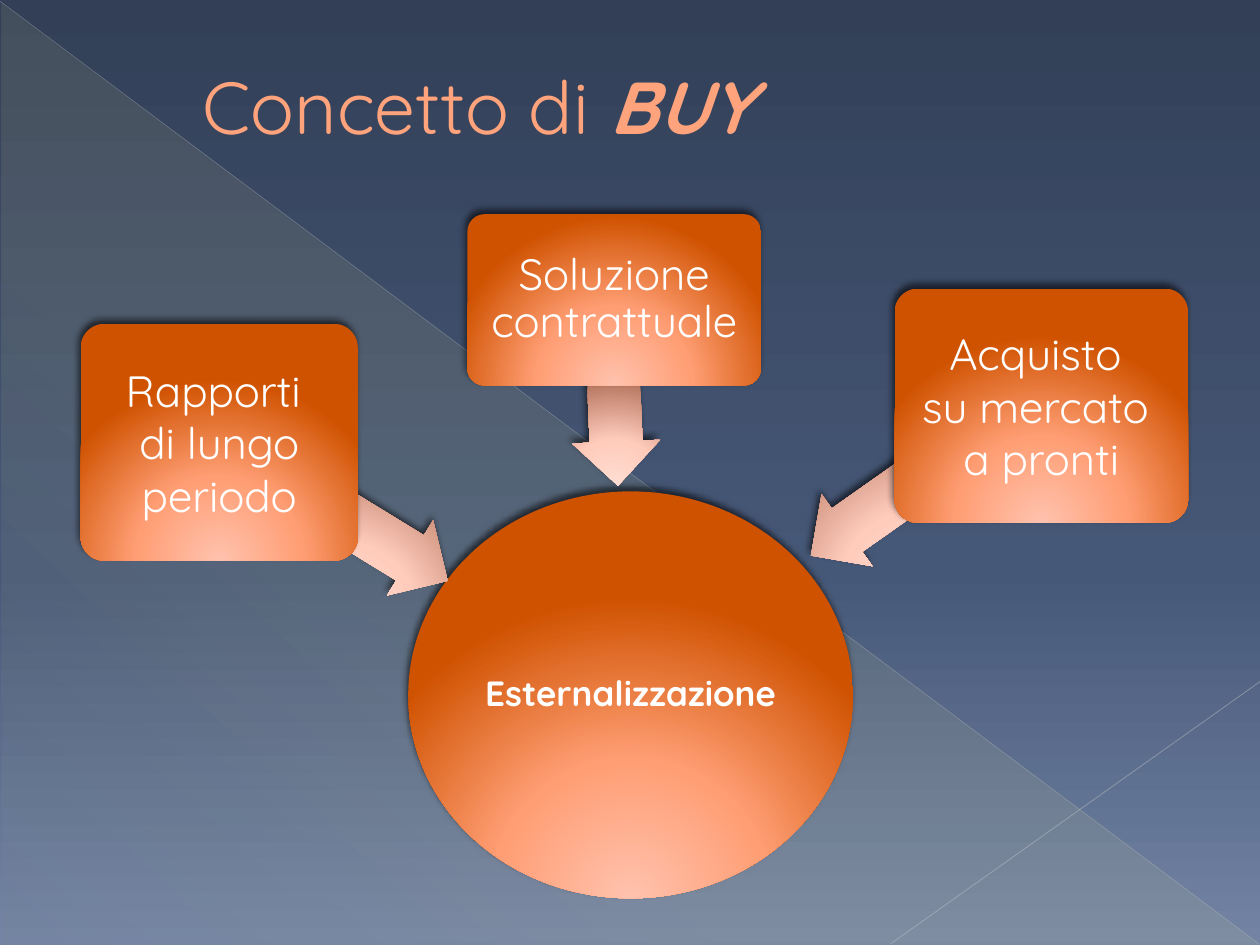
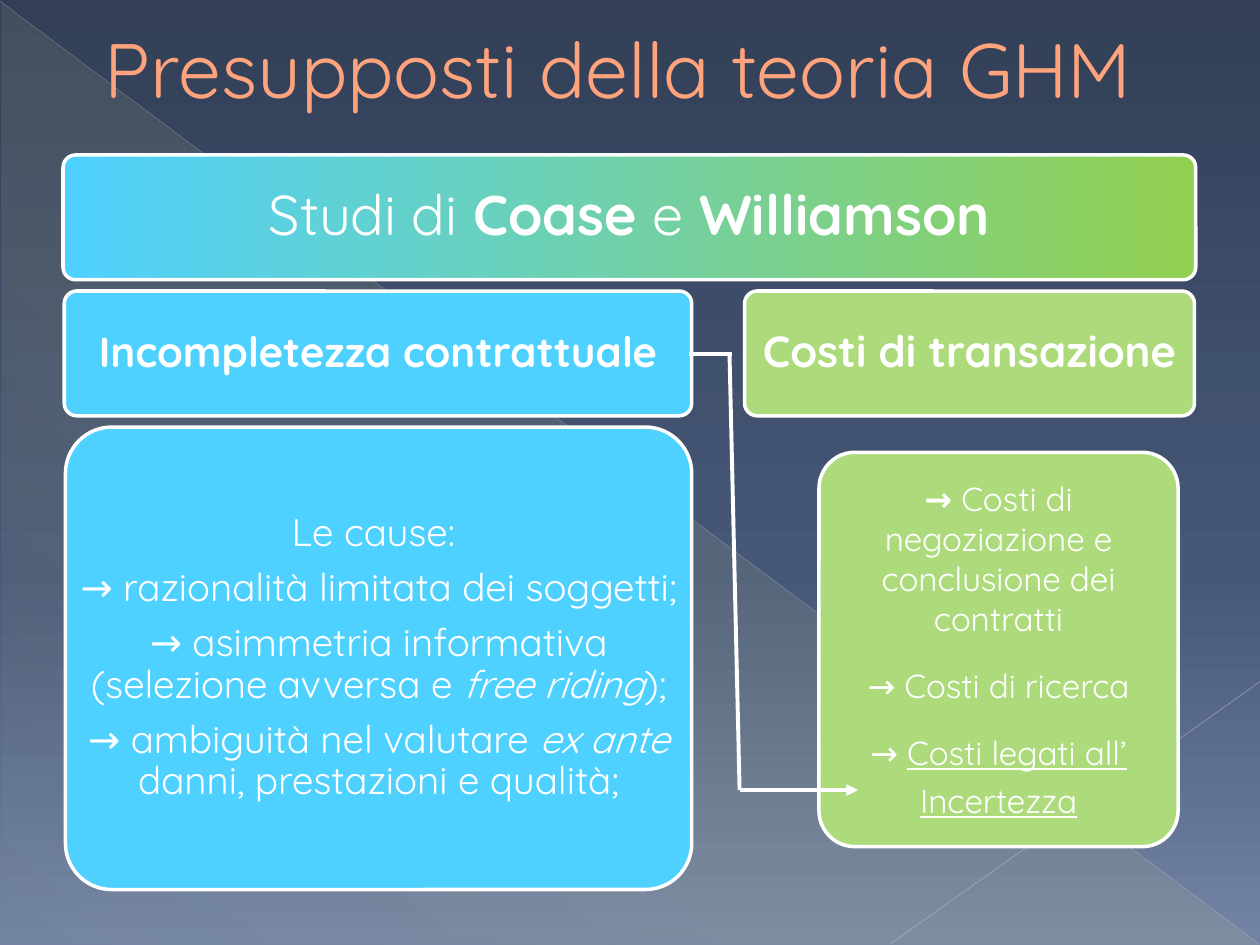
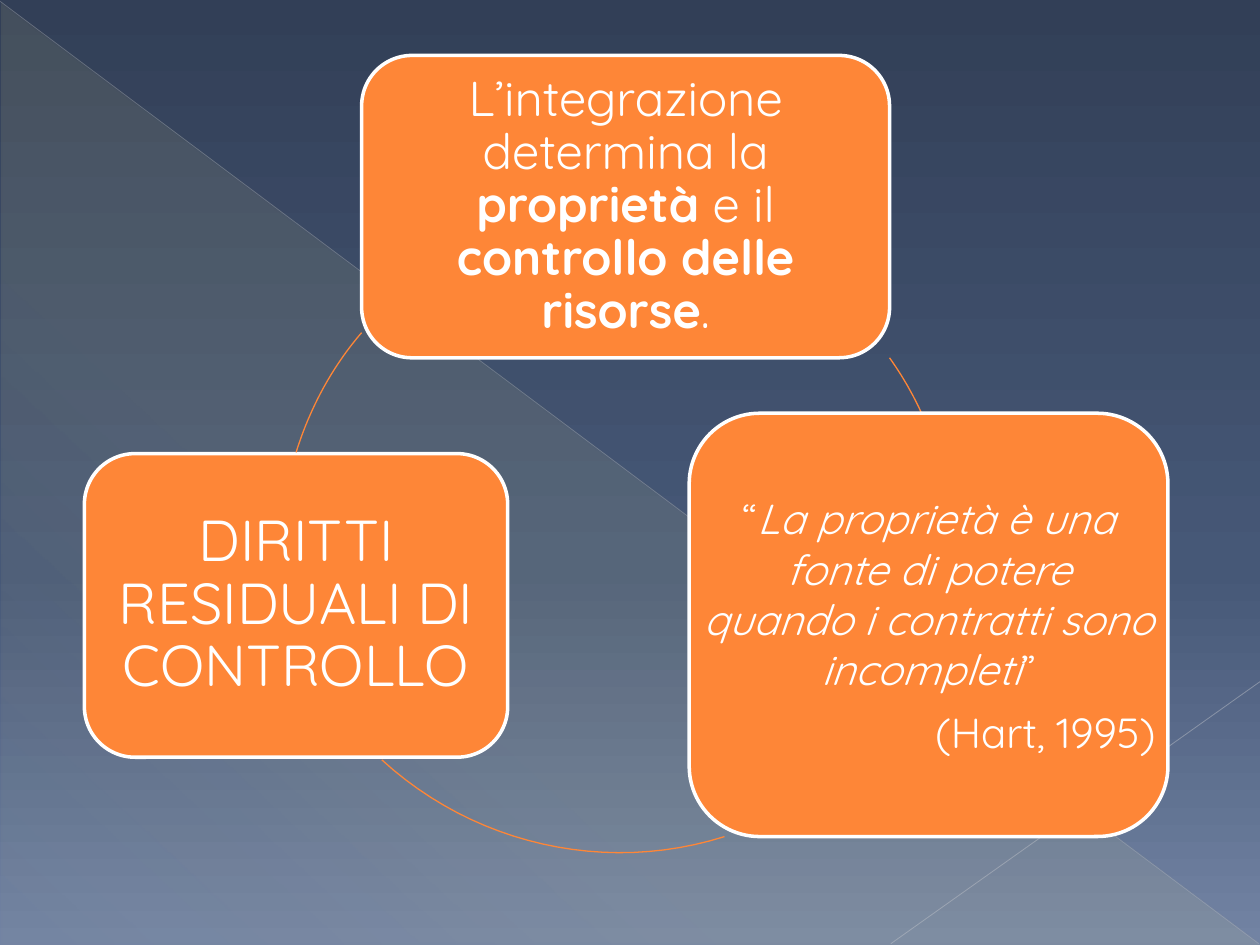
from lxml import etree
from pptx import Presentation
from pptx.dml.color import RGBColor
from pptx.enum.shapes import MSO_CONNECTOR, MSO_SHAPE
from pptx.enum.text import MSO_ANCHOR, PP_ALIGN
from pptx.oxml.ns import qn
from pptx.util import Inches, Pt

STRAIGHT = MSO_CONNECTOR.STRAIGHT
TRIANGLE = MSO_SHAPE.RIGHT_TRIANGLE
ELLIPSE = MSO_SHAPE.OVAL
ROUNDED = MSO_SHAPE.ROUNDED_RECTANGLE
LEFT_ARROW = MSO_SHAPE.LEFT_ARROW
MIDDLE = MSO_ANCHOR.MIDDLE
CENTER = PP_ALIGN.CENTER
RIGHT = PP_ALIGN.RIGHT

WHITE = RGBColor(0xFF, 0xFF, 0xFF)
BLACK = RGBColor(0x00, 0x00, 0x00)
TITLE_COLOR = RGBColor(0xFF, 0xA3, 0x7C)
TITLE_EDGE = RGBColor(0xB0, 0x5D, 0x26)
ORANGE = RGBColor(0xFE, 0x86, 0x37)
SKY = RGBColor(0x4F, 0xD1, 0xFF)
LEAF = RGBColor(0x92, 0xD0, 0x50)
LIGHT_LEAF = RGBColor(0xAD, 0xDB, 0x7B)
GLOW = RGBColor(0xFF, 0xF3, 0x9D)
DIAGONAL_COLOR = RGBColor(0xBA, 0xBD, 0xC4)
CORNER_COLOR = RGBColor(0xC1, 0xC4, 0xCA)

NIGHT_STOPS = [
    (0, RGBColor(0x32, 0x3F, 0x57), 100),
    (60, RGBColor(0x46, 0x58, 0x77), 100),
    (100, RGBColor(0x72, 0x83, 0xA3), 100),
]
GLOW_STOPS = [(0, GLOW, 10), (70, GLOW, 8), (100, GLOW, 1)]
EMBER_STOPS = [
    (0, RGBColor(0xFF, 0xC2, 0xAE), 100),
    (46, RGBColor(0xFF, 0x9E, 0x74), 100),
    (100, RGBColor(0xCF, 0x52, 0x00), 100),
]
ARROW_STOPS = [
    (0, RGBColor(0xFF, 0xDD, 0xD3), 100),
    (46, RGBColor(0xFF, 0xCC, 0xBC), 100),
    (100, RGBColor(0xBB, 0x7B, 0x65), 100),
]
STUDY_STOPS = [(0, SKY, 100), (100, LEAF, 100)]

FONT = "Quicksand"
BOLD = {"bold": True}
ITALIC = {"italic": True}
UNDERLINE = {"underline": True}
CENTERED = {"alignment": CENTER}


def tight(size):
    """Return the format of a centred paragraph with close lines."""
    return {"alignment": CENTER, "line_spacing": 0.9, "space_after": Pt(0.35 * size)}


def set_values(target, values):
    """Set each attribute of the target from a dict."""
    for name, value in values.items():
        setattr(target, name, value)


def add_node(parent, tag, **attributes):
    """Append a drawing element with its attributes."""
    texts = {name: str(value) for name, value in attributes.items()}
    return etree.SubElement(parent, qn(tag), texts)


def add_color(parent, color, opacity):
    """Append a colour with an opacity in percent."""
    node = add_node(parent, "a:srgbClr", val=color)
    if opacity < 100:
        add_node(node, "a:alpha", val=opacity * 1000)


def set_gradient(parent, stops, angle=None):
    """Replace a solid fill by a linear gradient, or a radial one without angle."""
    solid = parent.find(qn("a:solidFill"))
    gradient = etree.Element(qn("a:gradFill"), {"rotWithShape": "1"})
    stop_list = add_node(gradient, "a:gsLst")
    for position, color, opacity in stops:
        add_color(add_node(stop_list, "a:gs", pos=position * 1000), color, opacity)
    if angle is None:
        radial = add_node(gradient, "a:path", path="circle")
        add_node(radial, "a:fillToRect", l=50000, t=155000, r=50000, b=-55000)
    else:
        add_node(gradient, "a:lin", ang=angle * 60000, scaled=0)
    parent.replace(solid, gradient)


def add_line(slide, start, end, color, width, opacity=100, arrow=False):
    """Draw a straight line, with an arrowhead at its end if asked."""
    ends = [Inches(value) for value in (*start, *end)]
    connector = slide.shapes.add_connector(STRAIGHT, *ends)
    connector.line.color.rgb = color
    connector.line.width = Pt(width)
    properties = connector.element.spPr
    line = properties.find(qn("a:ln"))
    if opacity < 100:
        add_node(line.find(".//" + qn("a:srgbClr")), "a:alpha", val=opacity * 1000)
    if arrow:
        add_node(line, "a:tailEnd", type="triangle")
    add_node(properties, "a:effectLst")


def add_figure(slide, kind, place, color=WHITE, stops=None, angle=None,
               adjustments=(), border=False, shadow=False, rotation=0):
    """Draw a preset shape with a plain or gradient fill."""
    figure = slide.shapes.add_shape(kind, *map(Inches, place))
    figure.rotation = rotation
    for index, value in enumerate(adjustments):
        figure.adjustments[index] = value
    figure.shadow.inherit = False
    figure.fill.solid()
    figure.fill.fore_color.rgb = color
    properties = figure.element.spPr
    if stops:
        set_gradient(properties, stops, angle)
    if border:
        figure.line.color.rgb = WHITE
        figure.line.width = Pt(2)
    else:
        figure.line.fill.background()
    if shadow:
        effects = properties.find(qn("a:effectLst"))
        outer = add_node(effects, "a:outerShdw", blurRad=Pt(4), dist=Pt(3),
                         dir=245 * 60000, algn="ctr", rotWithShape=0)
        add_color(outer, BLACK, 60)


def add_text(slide, place, size, paragraphs, inset, color=WHITE):
    """Write paragraphs of (format, spans) in a box and return the box."""
    box = slide.shapes.add_textbox(*map(Inches, place))
    frame = box.text_frame
    margins = ("margin_left", "margin_top", "margin_right", "margin_bottom")
    set_values(frame, dict.fromkeys(margins, Inches(inset)))
    set_values(frame, {"word_wrap": True, "vertical_anchor": MIDDLE})
    for index, (layout, spans) in enumerate(paragraphs):
        para = frame.paragraphs[0] if index == 0 else frame.add_paragraph()
        set_values(para, layout)
        for text, style in spans:
            span = para.add_run()
            span.text = text
            set_values(span.font, {"name": FONT, "size": Pt(size), **style})
            span.font.color.rgb = color
    return box


def add_title(slide, place, size, spans):
    """Write the slide title with a thin outline."""
    box = add_text(slide, place, size, [({}, spans)], 0.05, TITLE_COLOR)
    box.text_frame.margin_left = Inches(0.63)
    for span in box.text_frame.paragraphs[0].runs:
        outline = etree.Element(qn("a:ln"), {"w": str(Pt(0.5))})
        add_color(add_node(outline, "a:solidFill"), TITLE_EDGE, 100)
        span.font.fill.solid()
        span.font.color.rgb = TITLE_COLOR
        span.font._element.insert(0, outline)


def add_card(slide, place, size, paragraphs, inset, kind=ROUNDED, **look):
    """Draw a shape and write its text over the full shape."""
    add_figure(slide, kind, place, **look)
    add_text(slide, place, size, paragraphs, inset)


def add_arc(slide, start, first, second, end, steps=24):
    """Draw a thin cubic curve as an open outline."""
    points = []
    for step in range(steps + 1):
        t = step / steps
        weights = ((1 - t) ** 3, 3 * t * (1 - t) ** 2, 3 * t * t * (1 - t), t ** 3)
        controls = zip(*(start, first, second, end))
        points.append([Inches(sum(w * c for w, c in zip(weights, axis)))
                       for axis in controls])
    builder = slide.shapes.build_freeform(*points[0])
    builder.add_line_segments(points[1:], close=False)
    arc = builder.convert_to_shape()
    arc.shadow.inherit = False
    arc.fill.background()
    arc.line.color.rgb = ORANGE
    arc.line.width = Pt(0.75)


def add_slide(deck):
    """Add a blank slide with the shared backdrop."""
    slide = deck.slides.add_slide(deck.slide_layouts[6])
    slide.background.fill.solid()
    set_gradient(slide.element.find(".//" + qn("p:bgPr")), NIGHT_STOPS, 90)
    add_figure(slide, TRIANGLE, (0.01, 0.02, 9.99, 7.48), stops=GLOW_STOPS, angle=133)
    add_line(slide, (0, 0.01), (9.99, 7.49), DIAGONAL_COLOR, 0.39, 35)
    add_line(slide, (10, 5.41), (7.07, 7.49), CORNER_COLOR, 0.47, 45)
    return slide


def build_buy(deck):
    """Build the slide with three sources leading to outsourcing."""
    slide = add_slide(deck)
    add_title(slide, (0.98, 0.29, 8.52, 1.09), 42,
              [("Concetto di ", {}), ("BUY", {**BOLD, **ITALIC})])
    ember = {"stops": EMBER_STOPS, "shadow": True}
    add_card(slide, (3.24, 3.9, 3.53, 3.23), 20,
             [(tight(20), [("Esternalizzazione", BOLD)])], 0.01, ELLIPSE, **ember)
    sources = [
        ((1.71, 3.74, 1.99, 0.7), 211.5, (0.64, 2.57, 2.2, 1.88), CENTERED,
         ["Rapporti ", "di lungo periodo"]),
        ((4.16, 2.79, 1.43, 0.7), 267.6, (3.71, 1.7, 2.33, 1.36), tight(25),
         ["Soluzione contrattuale"]),
        ((6.24, 3.44, 2.15, 0.7), 324.8, (7.1, 2.29, 2.33, 1.86), CENTERED,
         ["Acquisto ", "su mercato ", "a pronti"]),
    ]
    for arrow_place, rotation, card_place, layout, lines in sources:
        add_figure(slide, LEFT_ARROW, arrow_place, stops=ARROW_STOPS, shadow=True,
                   adjustments=(0.6, 0.5), rotation=rotation)
        paragraphs = [(layout, [(line, {})]) for line in lines]
        add_card(slide, card_place, 25, paragraphs, 0.05, adjustments=(0.1,), **ember)


def build_theory(deck):
    """Build the slide on the premises of the theory."""
    slide = add_slide(deck)
    add_title(slide, (0.2, 0, 9.3, 1.07), 44, [("Presupposti della teoria GHM", {})])
    look = {"adjustments": (0.1,), "border": True}
    studies = [("Studi di ", {}), ("Coase", BOLD), (" e ", {}), ("Williamson", BOLD)]
    causes = [
        [("Le cause: ", {})],
        [("→ razionalità limitata dei soggetti;", {})],
        [("→ asimmetria informativa (selezione avversa e ", {}),
         ("free riding", ITALIC), (");", {})],
        [("→ ambiguità nel valutare ", {}), ("ex ante", ITALIC),
         (" danni, prestazioni e qualità;", {})],
    ]
    spaced = {"space_after": Pt(18)}
    costs = [
        ({**CENTERED, **spaced},
         [("→ ", BOLD), ("Costi di negoziazione e conclusione dei contratti", {})]),
        ({**tight(19), **spaced}, [("→ Costi di ricerca", {})]),
        (tight(19), [("→ ", {}), ("Costi legati all’", UNDERLINE)]),
        (tight(19), [("Incertezza", UNDERLINE)]),
    ]
    add_card(slide, (0.5, 1.23, 8.99, 0.99), 32, [(tight(32), studies)], 0.13,
             stops=STUDY_STOPS, angle=0, **look)
    add_card(slide, (0.51, 2.31, 4.98, 0.99), 24,
             [(tight(24), [("Incompletezza contrattuale", BOLD)])], 0.1,
             color=SKY, **look)
    add_card(slide, (0.52, 3.39, 4.97, 3.67), 22,
             [(tight(22), spans) for spans in causes], 0.09, color=SKY, **look)
    add_card(slide, (5.91, 2.31, 3.57, 0.99), 25,
             [(tight(25), [("Costi di transazione", BOLD)])], 0.1,
             color=LIGHT_LEAF, **look)
    add_card(slide, (6.5, 3.59, 2.85, 3.13), 19, costs, 0.08, color=LIGHT_LEAF, **look)
    add_line(slide, (5.47, 2.81), (5.81, 2.81), WHITE, 2.25)
    add_line(slide, (5.79, 2.81), (5.87, 6.27), WHITE, 2.25)
    add_line(slide, (5.87, 6.27), (6.81, 6.27), WHITE, 2.25, arrow=True)


def build_control(deck):
    """Build the cycle of ownership and residual control rights."""
    slide = add_slide(deck)
    look = {"color": ORANGE, "border": True}
    integration = [
        ("L’integrazione determina la ", {}), ("proprietà", BOLD), (" e il ", {}),
        ("controllo delle risorse", BOLD), (".", {}),
    ]
    after = {"space_after": Pt(10)}
    quote = [
        (CENTERED, [("“", {}), ("La proprietà è una fonte di potere", ITALIC)]),
        ({**CENTERED, **after},
         [("quando i contratti sono incompleti", ITALIC), ("”", {})]),
        ({**tight(24), **after, "alignment": RIGHT}, [("(Hart, 1995)", {})]),
    ]
    rights = [("DIRITTI RESIDUALI DI CONTROLLO", {})]
    add_card(slide, (2.87, 0.44, 4.19, 2.4), 28, [(tight(28), integration)], 0.12, **look)
    add_arc(slide, (7.06, 2.84), (7.16, 2.98), (7.24, 3.12), (7.31, 3.27))
    add_card(slide, (5.47, 3.28, 3.8, 3.36), 24, quote, 0.1, **look)
    add_arc(slide, (5.75, 6.64), (4.8, 6.94), (3.76, 6.7), (3.03, 6.03))
    add_card(slide, (0.67, 3.6, 3.36, 2.41), 33, [(tight(33), rights)], 0.14, **look)
    add_arc(slide, (2.35, 3.59), (2.46, 3.24), (2.63, 2.92), (2.87, 2.64))


def main():
    """Build the deck and save it."""
    deck = Presentation()
    deck.slide_width = Inches(10)
    deck.slide_height = Inches(7.5)
    build_buy(deck)
    build_theory(deck)
    build_control(deck)
    deck.save("out.pptx")


if __name__ == "__main__":
    main()
